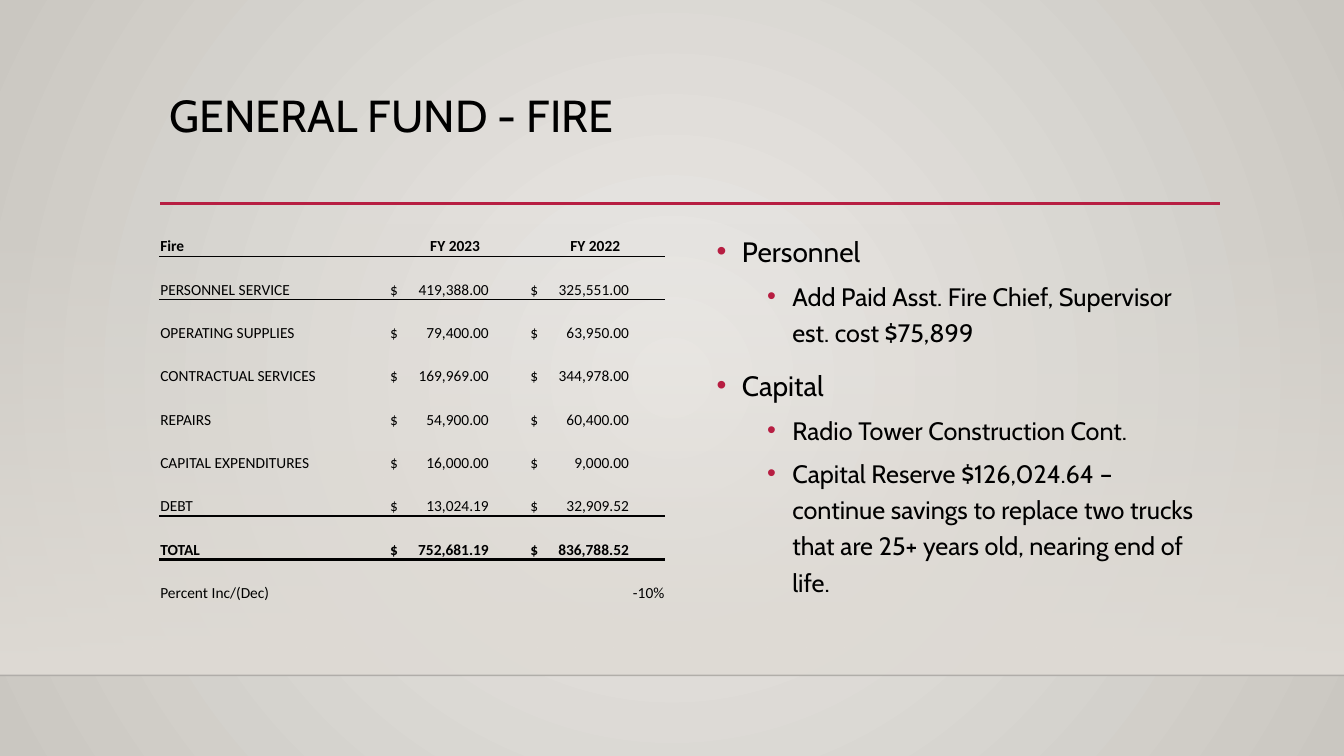
from dataclasses import dataclass

from lxml.etree import SubElement
from pptx import Presentation
from pptx.dml.color import RGBColor
from pptx.enum.shapes import MSO_CONNECTOR as Conn, MSO_SHAPE as Shape
from pptx.enum.text import MSO_ANCHOR as Anchor, PP_ALIGN as Align
from pptx.oxml.ns import qn
from pptx.util import Inches, Pt

BLACK = RGBColor(0x00, 0x00, 0x00)
EDGE = RGBColor(0x00, 0x00, 0x01)
RED = RGBColor(0xB7, 0x1E, 0x42)
LIGHT = RGBColor(0xEC, 0xEA, 0xE7)
DARK = RGBColor(0xCA, 0xC7, 0xC1)
SAND = RGBColor(0xDF, 0xDB, 0xD5)
NO_STYLE = "{2D5ABB26-0587-4C30-8999-92F81FD0307C}"
WIDE, FLOOR = 13.33, 6.7


@dataclass
class Row:
    label: str
    now: str
    prior: str
    bold: bool = False
    align: Align = Align.LEFT
    rule: float = 0


@dataclass
class Point:
    text: str
    level: int = 0


def money(label: str, now: float, prior: float, **look) -> Row:
    return Row(label, f"$\t{now:,.2f}", f"$\t{prior:,.2f}", **look)


ROWS = [
    Row("Fire", "FY 2023", "FY 2022", bold=True, align=Align.CENTER, rule=0.5),
    money("PERSONNEL SERVICE", 419388, 325551),
    money("OPERATING SUPPLIES", 79400, 63950),
    money("CONTRACTUAL SERVICES", 169969, 344978),
    money("REPAIRS", 54900, 60400),
    money("CAPITAL EXPENDITURES", 16000, 9000),
    money("DEBT", 13024.19, 32909.52, rule=2),
    money("TOTAL", 752681.19, 836788.52, bold=True),
    Row("Percent Inc/(Dec)", "", "-10%", align=Align.RIGHT),
]
POINTS = [
    Point("Personnel"),
    Point("Add Paid Asst. Fire Chief, Supervisor est. cost $75,899", 1),
    Point("Capital"),
    Point("Radio Tower Construction Cont.", 1),
    Point("Capital Reserve $126,024.64 – continue savings to replace two trucks "
          "that are 25+ years old, nearing end of life.", 1),
]


def style(para, face: str, size: float, bold: bool = False) -> None:
    for run in para.runs:
        font = run.font
        font.name, font.size, font.bold = face, Pt(size), bold
        font.color.rgb = BLACK


def shade(fill, first: RGBColor, last: RGBColor) -> None:
    """Give a fill a two-stop gradient."""
    fill.gradient()
    for stop, color, place in zip(fill.gradient_stops, (first, last), (0, 1)):
        stop.color.rgb = color
        stop.position = place


def fade(color, percent: int) -> None:
    """Set the opacity of a colour element."""
    SubElement(color, qn("a:alpha")).set("val", str(percent * 1000))


def add_back(slide) -> None:
    shade(slide.background.fill, LIGHT, DARK)
    grad = slide.element.find(".//" + qn("a:gradFill"))
    grad.remove(grad.find(qn("a:lin")))
    rings = SubElement(grad, qn("a:path"))
    rings.set("path", "circle")
    focus = SubElement(rings, qn("a:fillToRect"))
    for side in "ltrb":
        focus.set(side, "50000")

    wall = slide.shapes.add_shape(
        Shape.RECTANGLE, 0, Inches(2.21), Inches(WIDE), Inches(FLOOR - 2.21))
    wall.shadow.inherit = False
    wall.line.fill.background()
    shade(wall.fill, SAND, SAND)
    wall.fill.gradient_angle = 270
    fade(wall.element.find(".//" + qn("a:srgbClr")), 0)


def add_line(slide, left: float, right: float, y: float, color: RGBColor,
             width: float):
    line = slide.shapes.add_connector(
        Conn.STRAIGHT, Inches(left), Inches(y), Inches(right), Inches(y))
    line.line.color.rgb = color
    line.line.width = Pt(width)
    SubElement(line.element.spPr, qn("a:effectLst"))
    return line


def add_box(slide, left: float, top: float, width: float, height: float):
    box = slide.shapes.add_textbox(
        Inches(left), Inches(top), Inches(width), Inches(height))
    box.text_frame.word_wrap = True
    return box.text_frame


def add_title(slide, text: str) -> None:
    frame = add_box(slide, 1.58, 0.88, 10.5, 1.16)
    frame.text = text
    para = frame.paragraphs[0]
    para.line_spacing = 0.9
    style(para, "Cabin", 32)


def add_border(cell, side: str, width: float) -> None:
    line = SubElement(cell._tc.get_or_add_tcPr(), qn("a:ln" + side))
    line.set("w", str(Pt(width)))
    fill = SubElement(line, qn("a:solidFill"))
    SubElement(fill, qn("a:srgbClr")).set("val", str(BLACK))


def set_tab(para, inches: float) -> None:
    """Add a right-aligned tab stop."""
    tabs = SubElement(para._p.get_or_add_pPr(), qn("a:tabLst"))
    tab = SubElement(tabs, qn("a:tab"))
    tab.set("pos", str(Inches(inches)))
    tab.set("algn", "r")


def fill_cell(cell, text: str, row: Row, align: Align) -> None:
    cell.fill.background()
    cell.vertical_anchor = Anchor.BOTTOM
    cash = text.startswith("$")
    cell.margin_left = Inches(0.05 if cash else 0.01)
    cell.margin_right = cell.margin_top = Inches(0.01)
    cell.margin_bottom = 0
    cell.text_frame.text = text
    para = cell.text_frame.paragraphs[0]
    para.alignment = align
    if cash:
        set_tab(para, 0.98)
    style(para, "Calibri", 11, row.bold)


def add_budget(slide) -> None:
    frame = slide.shapes.add_table(
        len(ROWS), 3, Inches(1.58), Inches(2.21), Inches(5.02), Inches(3.77))
    frame.element.find(".//" + qn("a:tableStyleId")).text = NO_STYLE
    table = frame.table
    table.first_row = table.horz_banding = False
    for col, width in zip(table.columns, (2.24, 1.39, 1.39)):
        col.width = Inches(width)
    above = 0
    for r, row in enumerate(ROWS):
        table.rows[r].height = Inches(0.43 if r else 0.33)
        for c, text in enumerate((row.label, row.now, row.prior)):
            cell = table.cell(r, c)
            for side, width in (("T", above), ("B", row.rule)):
                if width:
                    add_border(cell, side, width)
            fill_cell(cell, text, row, row.align if c else Align.LEFT)
        above = row.rule


def add_bullet(para, indent: float) -> None:
    props = para._p.get_or_add_pPr()
    props.set("marL", str(Inches(indent)))
    props.set("indent", str(Inches(-0.25)))
    color = SubElement(props, qn("a:buClr"))
    SubElement(color, qn("a:srgbClr")).set("val", str(RED))
    SubElement(props, qn("a:buFont")).set("typeface", "Arial")
    SubElement(props, qn("a:buChar")).set("char", "•")


def add_points(slide) -> None:
    frame = add_box(slide, 7.01, 2.21, 5.08, 3.76)
    for i, point in enumerate(POINTS):
        para = frame.add_paragraph() if i else frame.paragraphs[0]
        para.text = point.text
        para.level = point.level
        para.line_spacing = 1.2
        if i:
            para.space_before = Pt(5 if point.level else 10)
        add_bullet(para, 0.25 + 0.5 * point.level)
        style(para, "Cabin", 20 - 2 * point.level)


def main() -> None:
    deck = Presentation()
    deck.slide_width, deck.slide_height = Inches(WIDE), Inches(7.5)
    slide = deck.slides.add_slide(deck.slide_layouts[6])
    add_back(slide)
    floor = add_line(slide, 0, WIDE, FLOOR, EDGE, 1)
    fade(floor.element.find(".//" + qn("a:srgbClr")), 20)
    add_line(slide, 1.59, 12.1, 2.02, RED, 2.5)
    add_title(slide, "GENERAL FUND - FIRE")
    add_budget(slide)
    add_points(slide)
    deck.save("out.pptx")


if __name__ == "__main__":
    main()
